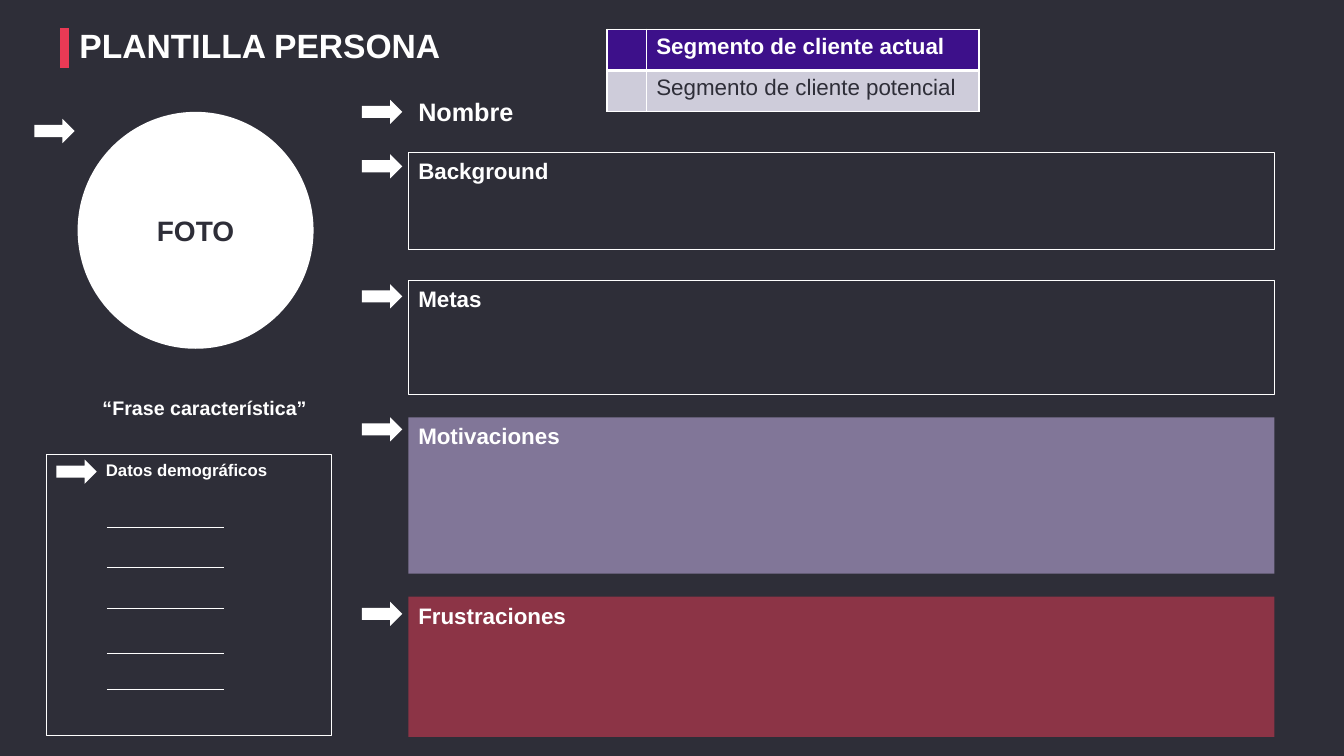
import pptx
import pptx.util
import pptx.dml.color
import pptx.enum.shapes
import pptx.enum.text
import pptx.oxml
import pptx.oxml.ns

WIDE, HIGH = 13.33, 7.5
DARK, WHITE, RED, LILAC = "2E2E38", "FFFFFF", "EA3A55", "D4BFF8"
TITLE = "PLANTILLA PERSONA"
NAME = "Nombre"
PHOTO = "FOTO"
QUOTE = "“Frase característica”"
FACTS = "Datos demográficos "
PANELS = [
    ("Background", 1.51, 0.97, None, 0.02),
    ("Metas", 2.78, 1.13, None, 0.04),
    ("Motivaciones", 4.14, 1.55, LILAC, 0),
    ("Frustraciones", 5.92, 1.39, RED, 0.05),
]
RULES = [5.23, 5.63, 6.04, 6.48, 6.84]
LEGEND = [
    ("Segmento de cliente actual", "3D108A", WHITE, True, (1, 3)),
    ("Segmento de cliente potencial", "CECCDA", DARK, False, (3, 1)),
]
COLS, ROW = (0.39, 3.3), 0.41
MAIN, SPAN = 4.05, 8.59
MARK = MAIN - 0.46

KIND = pptx.enum.shapes.MSO_SHAPE
ALIGN = pptx.enum.text.PP_ALIGN
ANCHOR = pptx.enum.text.MSO_ANCHOR
inch = pptx.util.Inches


def color(code):
    return pptx.dml.color.RGBColor.from_string(code)


def write(frame, text, size, code=WHITE, bold=True, align=ALIGN.LEFT, anchor=ANCHOR.TOP):
    frame.word_wrap = True
    frame.vertical_anchor = anchor
    frame.text = text
    para = frame.paragraphs[0]
    para.alignment = align
    font = para.runs[0].font
    font.name, font.size, font.bold = "Arial", pptx.util.Pt(size), bold
    font.color.rgb = color(code)


def label(box, text, size, align=ALIGN.LEFT):
    item = slide.shapes.add_textbox(*map(inch, box))
    write(item.text_frame, text, size, align=align)


def shape(kind, box, fill=None, line=None, alpha=None):
    item = slide.shapes.add_shape(kind, *map(inch, box))
    item.shadow.inherit = False
    if fill:
        item.fill.solid()
        item.fill.fore_color.rgb = color(fill)
    else:
        item.fill.background()
    if alpha:
        tint = item.fill._xPr.find(".//" + pptx.oxml.ns.qn("a:srgbClr"))
        tint.append(pptx.oxml.parse_xml(
            f'<a:alpha {pptx.oxml.ns.nsdecls("a")} val="{alpha * 1000}"/>'))
    if line:
        item.line.color.rgb = color(line)
        item.line.width = pptx.util.Pt(0.75)
    else:
        item.line.fill.background()
    return item


def arrow(left, top):
    shape(KIND.RIGHT_ARROW, (left, top, 0.4, 0.24), WHITE)


def rule(left, top, right, base, code, width):
    item = slide.shapes.add_connector(
        pptx.enum.shapes.MSO_CONNECTOR.STRAIGHT, *map(inch, (left, top, right, base)))
    item.line.color.rgb = color(code)
    item.line.width = pptx.util.Pt(width)
    item._element.spPr.append(pptx.oxml.parse_xml(
        f'<a:effectLst {pptx.oxml.ns.nsdecls("a")}/>'))


def border(cell, top, base):
    props = cell._tc.get_or_add_tcPr()
    for spot, (side, width) in enumerate(zip("LRTB", (1, 1, top, base))):
        props.insert(spot, pptx.oxml.parse_xml(
            f'<a:ln{side} {pptx.oxml.ns.nsdecls("a")} w="{pptx.util.Pt(width)}">'
            f'<a:solidFill><a:srgbClr val="{WHITE}"/></a:solidFill></a:ln{side}>'))


deck = pptx.Presentation()
deck.slide_width, deck.slide_height = inch(WIDE), inch(HIGH)
slide = deck.slides.add_slide(deck.slide_layouts[6])
slide.background.fill.solid()
slide.background.fill.fore_color.rgb = color(DARK)

rule(0.64, 0.28, 0.64, 0.67, RED, 6)
label((0.69, 0.2, 10.84, 0.5), TITLE, 24)

facts = shape(KIND.RECTANGLE, (0.46, 4.51, 2.83, 2.79), line=WHITE)
write(facts.text_frame, FACTS, 12, align=ALIGN.CENTER)
arrow(0.56, 4.56)
for top in RULES:
    rule(1.06, top, 2.22, top, WHITE, 0.75)

label((0.37, 3.88, 3.32, 0.39), QUOTE, 14, ALIGN.CENTER)
photo = shape(KIND.OVAL, (0.77, 1.11, 2.34, 2.35), WHITE)
write(photo.text_frame, PHOTO, 20, DARK, align=ALIGN.CENTER, anchor=ANCHOR.MIDDLE)
arrow(0.34, 1.18)

label((MAIN, 0.91, 4.19, 0.39), NAME, 18)
arrow(MARK, 0.99)
for text, top, tall, fill, drop in PANELS:
    panel = shape(KIND.RECTANGLE, (MAIN, top, SPAN, tall), fill,
                  None if fill else WHITE, 50 if fill else None)
    write(panel.text_frame, text, 16)
    arrow(MARK, top + drop)

grid = slide.shapes.add_table(
    len(LEGEND), len(COLS), *map(inch, (6.02, 0.29, sum(COLS), ROW * len(LEGEND)))).table
for col, width in zip(grid.columns, COLS):
    col.width = inch(width)
for row, (text, fill, ink, bold, edges) in zip(grid.rows, LEGEND):
    row.height = inch(ROW)
    for cell in row.cells:
        cell.fill.solid()
        cell.fill.fore_color.rgb = color(fill)
        border(cell, *edges)
    write(row.cells[1].text_frame, text, 16, ink, bold)

deck.save("out.pptx")
